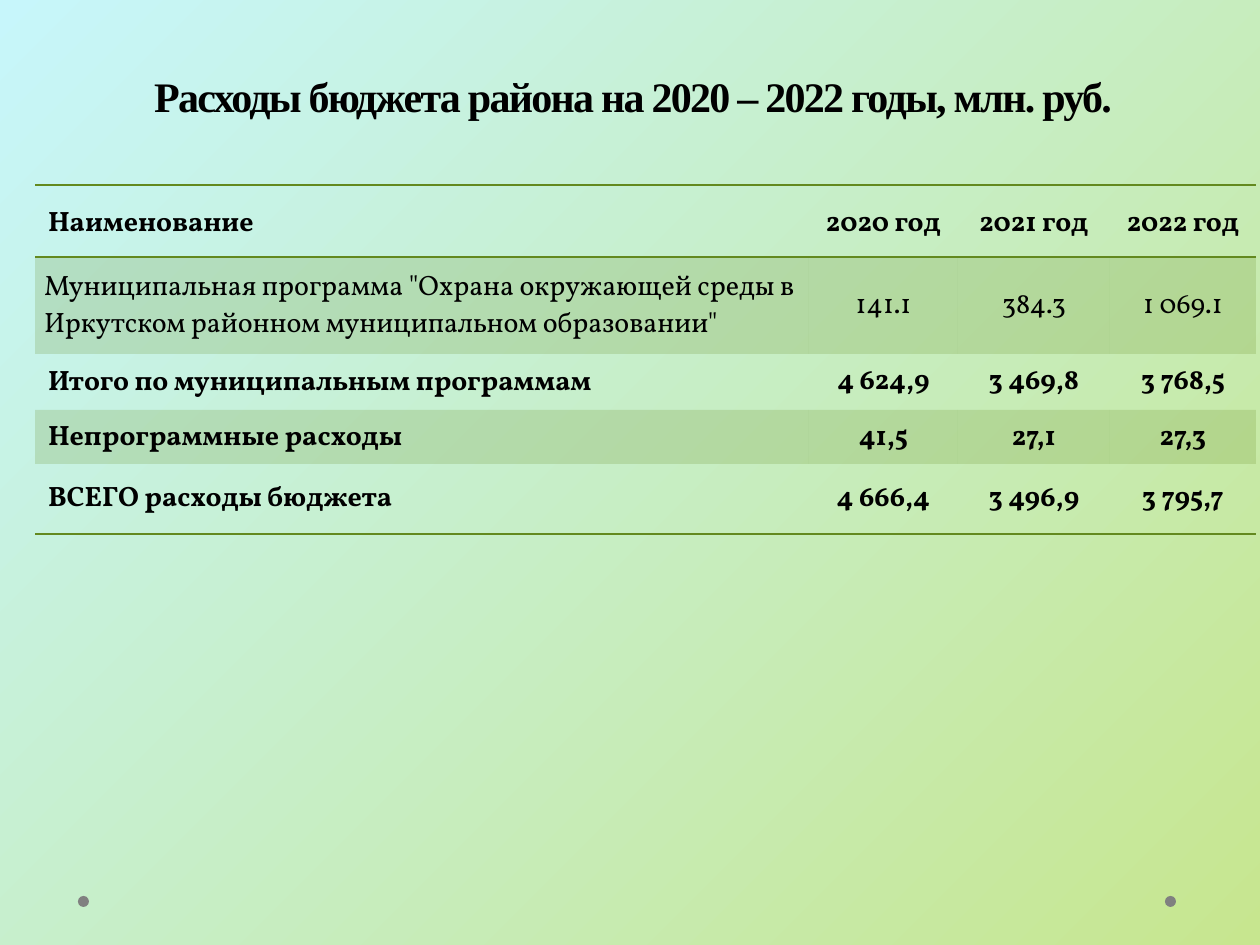
from lxml import etree
from pptx import Presentation
from pptx.dml.color import RGBColor
from pptx.enum.shapes import MSO_SHAPE
from pptx.enum.text import MSO_ANCHOR, PP_ALIGN
from pptx.oxml.ns import qn
from pptx.util import Pt

LEFT, CENTER = PP_ALIGN.LEFT, PP_ALIGN.CENTER
MIDDLE, BOTTOM = MSO_ANCHOR.MIDDLE, MSO_ANCHOR.BOTTOM
OVAL = MSO_SHAPE.OVAL
PLAIN = "{2D5ABB26-0587-4C30-8999-92F81FD0307C}"
WIDE, SLIM, TIGHT = (13, 6, 13, 6), (9, 0, 9, 0), (1, 1, 1, 0)

COLS = (774, 149, 152, 146)
# height, bold, banded, edges, label style, value style, texts
# a cell style is (line spacing, insets)
ROWS = (
    (72, True, False, ("lnT", "lnB"), (1.15, WIDE), (1.15, WIDE),
     ("Наименование", "2020 год", "2021 год", "2022 год")),
    (97, False, True, (), (0.95, SLIM), (1.0, TIGHT),
     ('Муниципальная программа "Охрана окружающей среды в '
      'Иркутском районном муниципальном образовании"',
      "141.1", "384.3", "1 069.1")),
    (56, True, False, (), (0.95, WIDE), (1.0, SLIM),
     ("Итого по муниципальным программам", "4 624,9", "3 469,8", "3 768,5")),
    (54, True, True, (), (0.95, WIDE), (0.95, SLIM),
     ("Непрограммные расходы", "41,5", "27,1", "27,3")),
    (70, True, False, ("lnB",), (0.95, WIDE), (0.95, SLIM),
     ("ВСЕГО расходы бюджета", "4 666,4", "3 496,9", "3 795,7")),
)


def px(n):
    return round(n * 914400 / 126)


def color(code):
    return RGBColor.from_string(code)


class Deck:
    ink, green, grey = "000000", "63891F", "808080"
    head, body = "Times New Roman", "Vollkorn"

    def __init__(self):
        self.prs = Presentation()
        self.prs.slide_width, self.prs.slide_height = px(1260), px(945)
        self.slide = self.prs.slides.add_slide(self.prs.slide_layouts[5])

    def backdrop(self, *codes):
        fill = self.slide.background.fill
        fill.gradient()
        fill.gradient_angle = 315
        for stop, code in zip(fill.gradient_stops, codes):
            stop.color.rgb = color(code)

    def dot(self, x, y, size):
        dot = self.slide.shapes.add_shape(OVAL, px(x), px(y), px(size), px(size))
        dot.shadow.inherit = False
        dot.fill.solid()
        dot.fill.fore_color.rgb = color(self.grey)
        dot.line.fill.background()

    def put_run(self, para, text, font, size, bold, align):
        para.alignment = align
        run = para.add_run()
        run.text = text
        run.font.name, run.font.size, run.font.bold = font, Pt(size), bold
        run.font.color.rgb = color(self.ink)
        return run

    def title(self, text, x, y, w, h):
        box = self.slide.shapes.title
        box.left, box.top, box.width, box.height = map(px, (x, y, w, h))
        frame = box.text_frame
        frame.vertical_anchor = BOTTOM
        frame.word_wrap = True
        run = self.put_run(frame.paragraphs[0], text, self.head, 24, True, CENTER)
        run._r.get_or_add_rPr().set("spc", "-100")

    def edge(self, cell, side):
        line = etree.Element(qn("a:" + side), w=str(Pt(1)))
        fill = etree.SubElement(line, qn("a:solidFill"))
        etree.SubElement(fill, qn("a:srgbClr"), val=self.green)
        cell._tc.get_or_add_tcPr().insert(0, line)

    def band(self, cell):
        """Tint a cell with see-through green."""
        cell.fill.solid()
        cell.fill.fore_color.rgb = color(self.green)
        tint = cell._tc.tcPr.find(".//" + qn("a:srgbClr"))
        etree.SubElement(tint, qn("a:alpha"), val="20000")

    def cell(self, cell, text, align, bold, banded, edges, style):
        space, insets = style
        (cell.margin_left, cell.margin_top,
         cell.margin_right, cell.margin_bottom) = map(px, insets)
        cell.vertical_anchor = MIDDLE
        para = cell.text_frame.paragraphs[0]
        para.line_spacing = space
        self.put_run(para, text, self.body, 16, bold, align)
        if banded:
            self.band(cell)
        else:
            cell.fill.background()
        for side in reversed(edges):
            self.edge(cell, side)

    def table(self, x, y, cols, rows):
        high = sum(row[0] for row in rows)
        table = self.slide.shapes.add_table(
            len(rows), len(cols), px(x), px(y), px(sum(cols)), px(high)).table
        table.first_row = table.horz_banding = False
        table._tbl.tblPr.find(qn("a:tableStyleId")).text = PLAIN
        for col, wide in zip(table.columns, cols):
            col.width = px(wide)
        for r, (tall, bold, banded, edges, label, value, texts) in enumerate(rows):
            table.rows[r].height = px(tall)
            for c, text in enumerate(texts):
                self.cell(table.cell(r, c), text, CENTER if c else LEFT,
                          bold, banded, edges, value if c else label)


def main():
    deck = Deck()
    deck.backdrop("C7F6FB", "C7E68F")
    for x in (1165, 78):
        deck.dot(x, 896, 11)
    deck.title("Расходы бюджета района на 2020 – 2022 годы, млн. руб.",
               35, 62, 1196, 65)
    deck.table(35, 185, COLS, ROWS)
    deck.prs.save("out.pptx")


if __name__ == "__main__":
    main()
